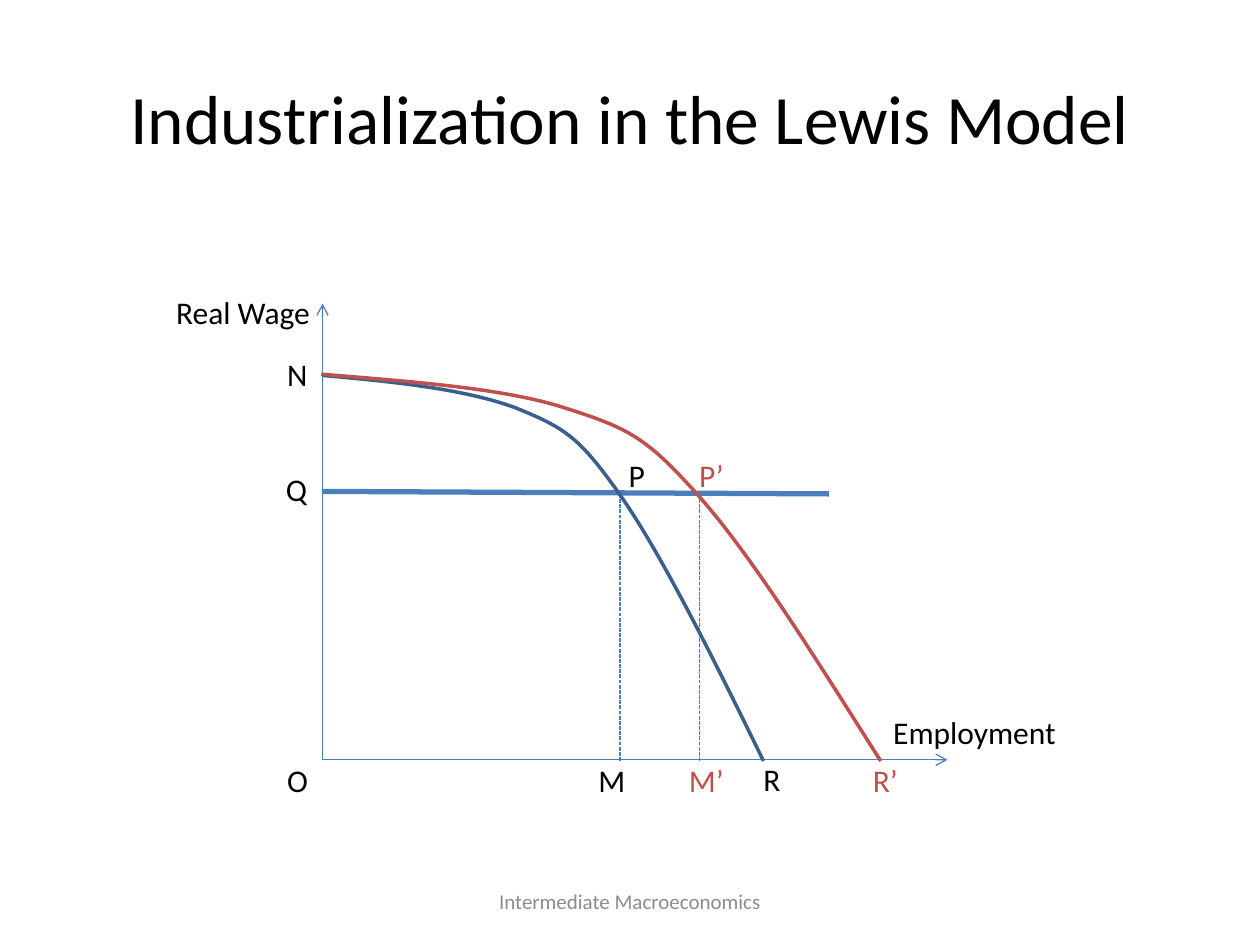
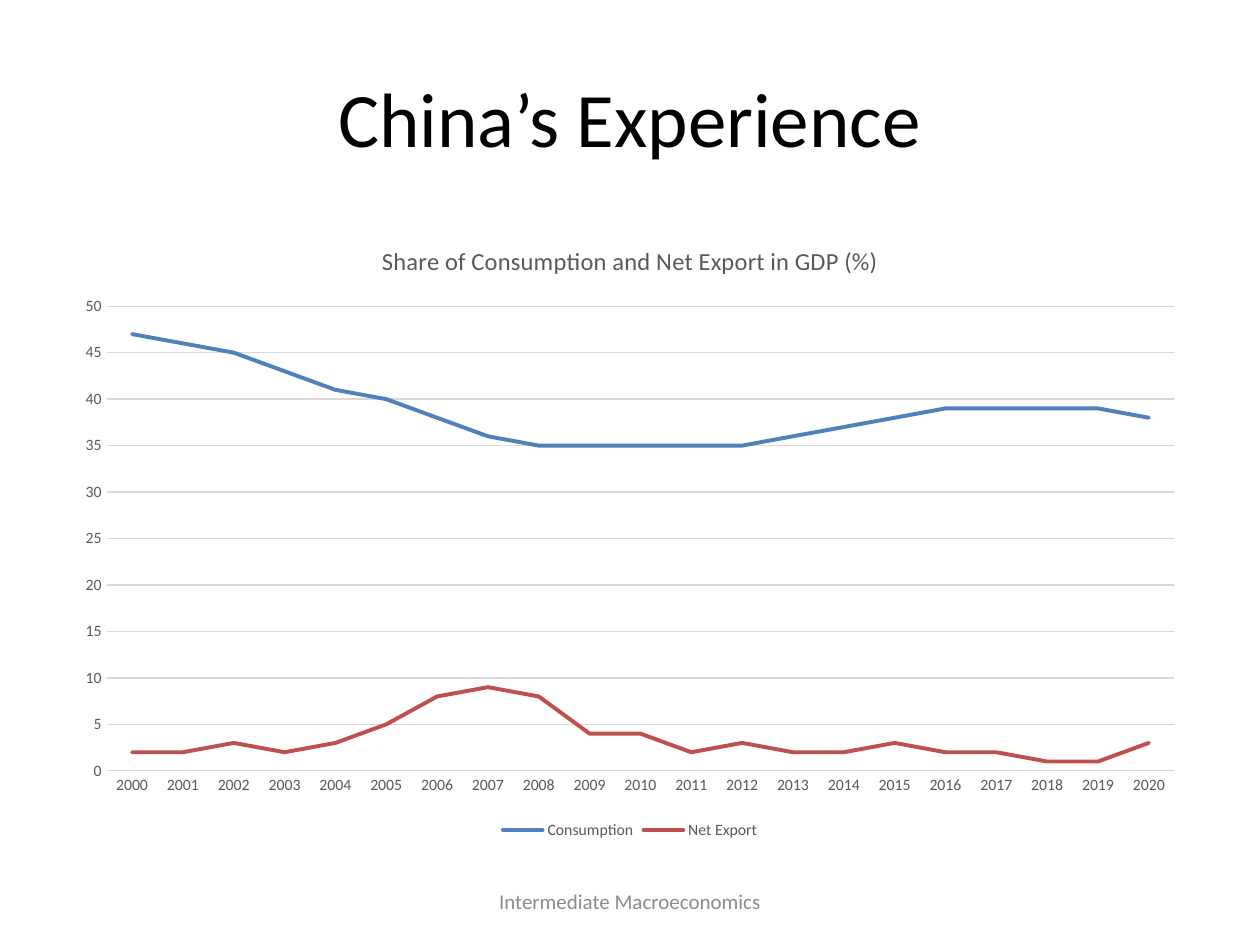
from dataclasses import dataclass

from lxml import etree
from pptx import Presentation
from pptx.chart.data import CategoryChartData
from pptx.dml.color import RGBColor
from pptx.enum.chart import XL_CHART_TYPE, XL_LEGEND_POSITION, XL_TICK_MARK
from pptx.enum.dml import MSO_LINE
from pptx.enum.shapes import MSO_CONNECTOR
from pptx.enum.text import MSO_ANCHOR, MSO_AUTO_SIZE, PP_ALIGN
from pptx.oxml.ns import qn
from pptx.util import Pt

PX = 9144  # 100 px to the inch
FONT = "Calibri"

BLACK = RGBColor(0x00, 0x00, 0x00)
GRAY = RGBColor(0x8C, 0x8C, 0x8C)
SLATE = RGBColor(0x59, 0x59, 0x59)
SILVER = RGBColor(0xD9, 0xD9, 0xD9)
AXIS = RGBColor(0x4B, 0x7E, 0xBC)
NAVY = RGBColor(0x3A, 0x5F, 0x8C)
BLUE = RGBColor(0x4F, 0x81, 0xBD)
RED = RGBColor(0xC0, 0x50, 0x4D)

LINE = XL_CHART_TYPE.LINE
BOTTOM = XL_LEGEND_POSITION.BOTTOM
NO_TICK = XL_TICK_MARK.NONE
DASH = MSO_LINE.SQUARE_DOT
STRAIGHT = MSO_CONNECTOR.STRAIGHT
MIDDLE = MSO_ANCHOR.MIDDLE
CENTER = PP_ALIGN.CENTER
GROW = MSO_AUTO_SIZE.SHAPE_TO_FIT_TEXT

Point = tuple[int, int]


@dataclass(frozen=True)
class Label:
    text: str
    left: int
    top: int
    width: int = 54
    color: RGBColor = BLACK
    wrap: bool = True


@dataclass(frozen=True)
class Rule:
    start: Point
    end: Point
    width: float = 0.75
    color: RGBColor = AXIS
    dashed: bool = False
    arrow: bool = False


@dataclass(frozen=True)
class Curve:
    """A start point, then three points for each Bezier piece."""
    points: list[Point]
    color: RGBColor


@dataclass(frozen=True)
class Series:
    name: str
    color: RGBColor
    values: list[int]


RULES = [
    Rule((256, 603), (752, 603), arrow=True),
    Rule((256, 603), (256, 241), arrow=True),
    Rule((256, 390), (658, 392), width=3),
    Rule((492, 392), (492, 604), dashed=True),
    Rule((555, 392), (555, 604), color=RED, dashed=True),
]

CURVES = [
    Curve([(256, 298), (313, 303), (370, 309), (410, 324), (449, 340),
           (460, 347), (493, 394), (525, 440), (566, 522), (606, 604)], NAVY),
    Curve([(255, 297), (327, 303), (400, 308), (449, 324), (499, 340),
           (513, 347), (554, 393), (596, 440), (647, 522), (699, 604)], RED),
]

LABELS = [
    Label("Employment", 699, 561, 151, wrap=False),
    Label("Real Wage", 130, 228, 187),
    Label("N", 218, 277),
    Label("Q", 217, 368),
    Label("O", 218, 599, 40),
    Label("M", 465, 599),
    Label("P", 489, 357),
    Label("R", 596, 598),
    Label("M’", 537, 599, color=RED),
    Label("P’", 545, 357, color=RED),
    Label("R’", 683, 599, color=RED),
]

YEARS = [str(year) for year in range(2000, 2021)]
SHARES = [
    Series("Consumption", BLUE, [47, 46, 45, 43, 41, 40, 38, 36, 35, 35, 35,
                                 35, 35, 36, 37, 38, 39, 39, 39, 39, 38]),
    Series("Net Export", RED, [2, 2, 3, 2, 3, 5, 8, 9, 8, 4, 4,
                               2, 3, 2, 2, 3, 2, 2, 1, 1, 3]),
]


def style(font, size: float, color: RGBColor) -> None:
    font.name = FONT
    font.size = Pt(size)
    font.bold = False
    font.color.rgb = color


def stroke(line, color: RGBColor, width: float) -> None:
    line.color.rgb = color
    line.width = Pt(width)


def add_text(slide, text: str, box: tuple[int, int, int, int], size: float,
             color: RGBColor):
    shape = slide.shapes.add_textbox(*(n * PX for n in box))
    frame = shape.text_frame
    frame.word_wrap = True
    frame.text = text
    style(frame.paragraphs[0].runs[0].font, size, color)
    return frame


def add_page(deck, title: str, size: float):
    """Add a blank slide with the shared title and footer."""
    slide = deck.slides.add_slide(deck.slide_layouts[6])
    parts = [
        (title, (50, 30, 900, 125), size, BLACK),
        ("Intermediate Macroeconomics", (342, 695, 316, 40), 12, GRAY),
    ]
    for part in parts:
        frame = add_text(slide, *part)
        frame.vertical_anchor = MIDDLE
        frame.paragraphs[0].alignment = CENTER
    return slide


def add_label(slide, label: Label) -> None:
    box = (label.left, label.top, label.width, 40)
    frame = add_text(slide, label.text, box, 18, label.color)
    frame.word_wrap = label.wrap
    frame.auto_size = GROW


def add_rule(slide, rule: Rule) -> None:
    ends = (n * PX for n in rule.start + rule.end)
    link = slide.shapes.add_connector(STRAIGHT, *ends)
    stroke(link.line, rule.color, rule.width)
    if rule.dashed:
        link.line.dash_style = DASH
    props = link._element.spPr
    if rule.arrow:
        etree.SubElement(props.find(qn("a:ln")), qn("a:tailEnd"), type="arrow")
    etree.SubElement(props, qn("a:effectLst"))


def bend(shape) -> None:
    """Turn each three line segments into one Bezier piece."""
    segments = list(shape._element.iter(qn("a:lnTo")))
    for i in range(0, len(segments), 3):
        piece = etree.Element(qn("a:cubicBezTo"))
        segments[i].addprevious(piece)
        for segment in segments[i:i + 3]:
            piece.append(segment[0])
            segment.getparent().remove(segment)


def add_curve(slide, curve: Curve) -> None:
    start, *rest = curve.points
    pen = slide.shapes.build_freeform(*start, scale=PX)
    pen.add_line_segments(rest, close=False)
    shape = pen.convert_to_shape()
    bend(shape)
    shape.shadow.inherit = False
    shape.fill.background()
    stroke(shape.line, curve.color, 2)


def add_model(deck) -> None:
    slide = add_page(deck, "Industrialization in the Lewis Model", 39.6)
    for rule in RULES:
        add_rule(slide, rule)
    for curve in CURVES:
        add_curve(slide, curve)
    for label in LABELS:
        add_label(slide, label)


def add_shares(deck) -> None:
    slide = add_page(deck, "China’s Experience", 44)
    data = CategoryChartData()
    data.categories = YEARS
    for item in SHARES:
        data.add_series(item.name, item.values)
    box = (n * PX for n in (50, 175, 900, 495))
    chart = slide.shapes.add_chart(LINE, *box, data).chart
    style(chart.font, 10, BLACK)

    chart.has_title = True
    title = chart.chart_title.text_frame
    title.text = "Share of Consumption and Net Export in GDP (%)"
    style(title.paragraphs[0].runs[0].font, 14, SLATE)
    chart.chart_title.include_in_layout = False

    chart.has_legend = True
    chart.legend.position = BOTTOM
    chart.legend.include_in_layout = False
    style(chart.legend.font, 9, SLATE)

    years, shares = chart.category_axis, chart.value_axis
    for axis in (years, shares):
        axis.major_tick_mark = axis.minor_tick_mark = NO_TICK
        style(axis.tick_labels.font, 9, SLATE)
    stroke(years.format.line, SILVER, 0.75)
    shares.format.line.fill.background()
    stroke(shares.major_gridlines.format.line, SILVER, 0.75)
    shares.minimum_scale, shares.maximum_scale = 0, 50
    shares.major_unit = 5

    chart.plots[0].vary_by_categories = False
    for series, item in zip(chart.plots[0].series, SHARES):
        series.smooth = False
        stroke(series.format.line, item.color, 2.25)
        series._element.spPr.find(qn("a:ln")).set("cap", "rnd")


def main() -> None:
    deck = Presentation()
    deck.slide_width, deck.slide_height = 1000 * PX, 750 * PX
    add_model(deck)
    add_shares(deck)
    deck.save("out.pptx")


if __name__ == "__main__":
    main()
